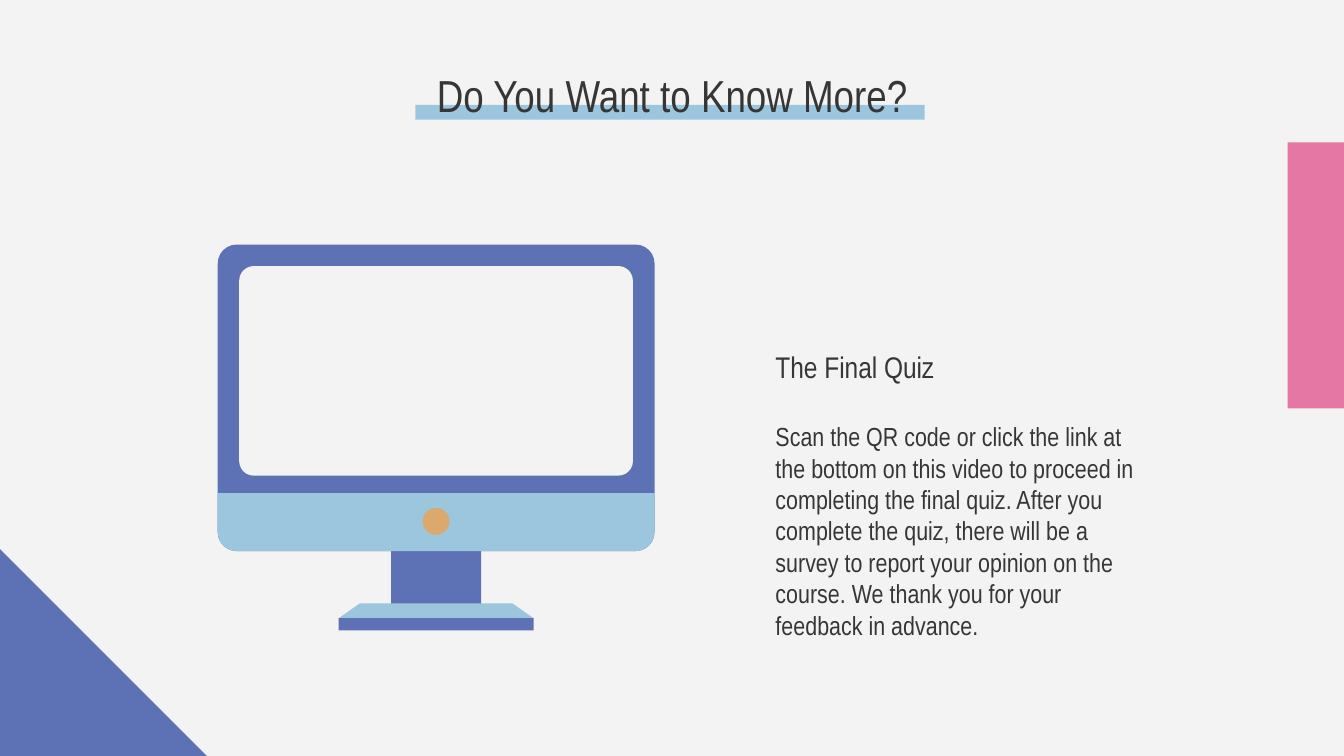
from lxml import etree
from pptx import Presentation
from pptx.dml.color import RGBColor
from pptx.enum import shapes, text
from pptx.util import Inches, Pt

BLUE, SKY, PINK, GOLD = "5C72B4", "9CC6DE", "E477A3", "DBA96B"
INK, PAPER = "363636", "F3F3F3"
FONT = "Arial Narrow"
KIND = shapes.MSO_SHAPE
QUIZ_TEXT = (
    "Scan the QR code or click the link at the bottom on this video to proceed in "
    "completing the final quiz. After you complete the quiz, there will be a survey "
    "to report your opinion on the course. We thank you for your feedback in advance."
)


def paint(fill, color):
    """Give a fill one solid colour from a hex string."""
    fill.solid()
    fill.fore_color.rgb = RGBColor.from_string(color)


def add_block(page, kind, left, top, width, height, color, adjust=None):
    """Add a flat, borderless preset shape."""
    block = page.shapes.add_shape(
        kind, Inches(left), Inches(top), Inches(width), Inches(height))
    block.shadow.inherit = False
    paint(block.fill, color)
    block.line.fill.background()
    if adjust is not None:
        block.adjustments[0] = adjust
    return block


def fill_placeholder(holder, box, words, size, align, anchor):
    """Move a placeholder into a box and set its unbulleted text."""
    holder.left, holder.top, holder.width, holder.height = map(Inches, box)
    frame = holder.text_frame
    frame.text = words
    frame.word_wrap = True
    frame.auto_size = text.MSO_AUTO_SIZE.NONE
    frame.vertical_anchor = anchor
    frame.margin_left = frame.margin_right = Inches(0.1)
    frame.margin_top = frame.margin_bottom = Inches(0.1)
    para = frame.paragraphs[0]
    para.alignment = align
    para.space_before = Pt(0)
    para.font.name = FONT
    para.font.size = Pt(size)
    para.font.color.rgb = RGBColor.from_string(INK)
    props = para._p.get_or_add_pPr()
    props.set("marL", "0")
    props.set("indent", "0")
    bullet = etree.Element(
        "{http://schemas.openxmlformats.org/drawingml/2006/main}buNone")
    props.insert(props.index(props.find("{*}defRPr")), bullet)


def add_decor(page, width, height):
    """Place the corner triangle and the edge bar."""
    side, bar = 1.54, 0.42
    add_block(page, KIND.RIGHT_TRIANGLE, 0, height - side, side, side, BLUE)
    add_block(page, KIND.RECTANGLE, width - bar, 1.06, bar, 1.98, PINK)


def add_heading(page, left, top, width, height):
    """Place the centred title in front of its highlight stripe."""
    title = page.shapes.title
    stripe = add_block(page, KIND.RECTANGLE, left + 2.75, top + 0.38,
                       3.79, 0.11, SKY)
    title._element.addprevious(stripe._element)
    fill_placeholder(title, (left, top, width, height),
                     "Do You Want to Know More?", 24,
                     text.PP_ALIGN.CENTER, text.MSO_ANCHOR.TOP)


def add_quiz_text(page, left, top, width):
    """Place the quiz subtitle above its description."""
    subtitle, body = list(page.placeholders)[1:3]
    fill_placeholder(subtitle, (left, top, width, 0.76), "The Final Quiz", 16,
                     text.PP_ALIGN.LEFT, text.MSO_ANCHOR.BOTTOM)
    fill_placeholder(body, (left, top + 0.83, width, 1.5), QUIZ_TEXT, 14,
                     text.PP_ALIGN.LEFT, text.MSO_ANCHOR.TOP)


def add_monitor(page, left, top, width, height):
    """Draw a desktop monitor with its stand, centred in the box."""
    middle, bottom = left + width / 2, top + height
    case, chin, bezel, radius = 2.28, 0.43, 0.16, 0.14
    neck, foot, button = 0.67, 1.45, 0.2
    add_block(page, KIND.RECTANGLE, middle - neck / 2, top + case - 0.1,
              neck, 0.5, BLUE)
    add_block(page, KIND.TRAPEZOID, middle - foot / 2, bottom - 0.2,
              foot, 0.11, SKY, 1.42)
    add_block(page, KIND.RECTANGLE, middle - foot / 2, bottom - 0.09,
              foot, 0.09, BLUE)
    add_block(page, KIND.ROUNDED_RECTANGLE, left, top, width, case, BLUE,
              radius / case)
    add_block(page, KIND.ROUNDED_RECTANGLE, left + bezel, top + bezel,
              width - 2 * bezel, 1.56, PAPER, 0.07)
    base = add_block(page, KIND.ROUND_2_SAME_RECTANGLE, left, top + case - chin,
                     width, chin, SKY, radius / chin)
    base.rotation = 180
    add_block(page, KIND.OVAL, middle - button / 2, top + case - chin + 0.11,
              button, button, GOLD)


def main():
    """Build and save the slide."""
    deck = Presentation()
    width, height = 10, 5.625
    deck.slide_width, deck.slide_height = Inches(width), Inches(height)
    page = deck.slides.add_slide(deck.slide_layouts.get_by_name("Two Content"))
    paint(page.background.fill, PAPER)
    add_decor(page, width, height)
    add_heading(page, 0.34, 0.4, 9.32, 0.63)
    add_quiz_text(page, 5.67, 2.2, 2.95)
    add_monitor(page, 1.62, 1.82, 3.25, 2.87)
    deck.save("out.pptx")


if __name__ == "__main__":
    main()
